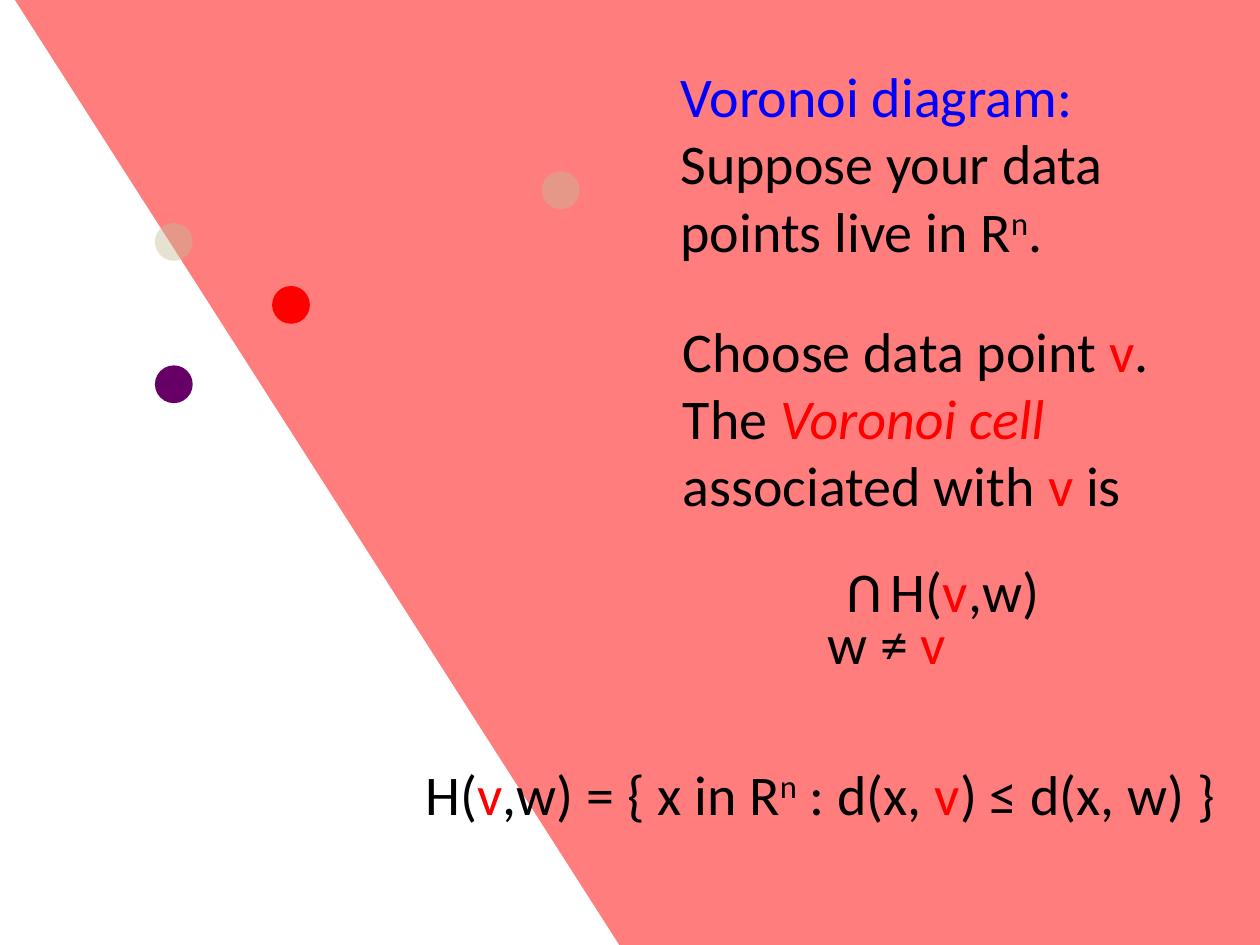
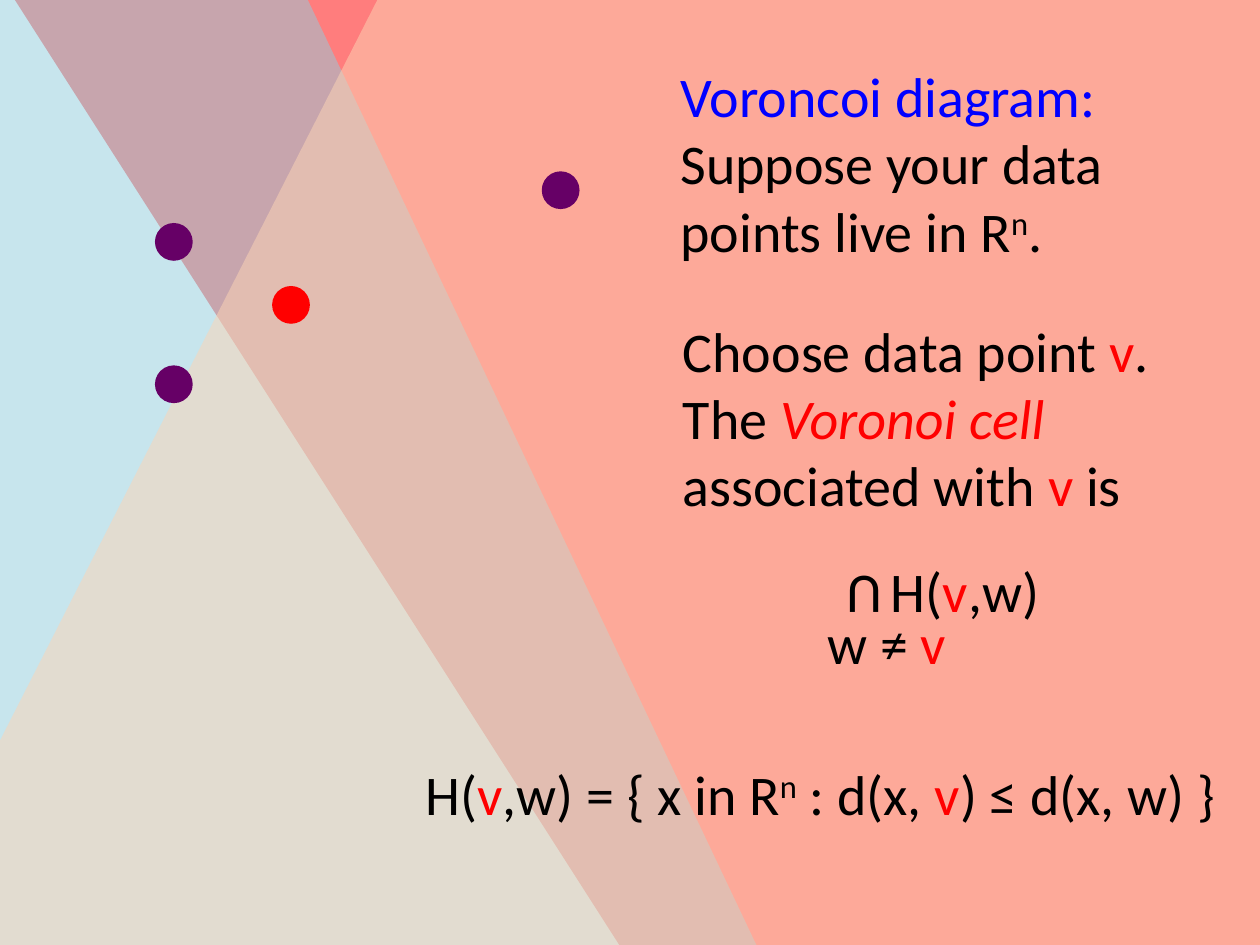
from lxml import etree
from pptx import Presentation
from pptx.dml.color import RGBColor
from pptx.enum.shapes import MSO_SHAPE
from pptx.enum.text import MSO_ANCHOR, MSO_AUTO_SIZE, PP_ALIGN
from pptx.oxml.ns import qn
from pptx.util import Inches, Pt

RECT, OVAL = MSO_SHAPE.RECTANGLE, MSO_SHAPE.OVAL
TOP, GROW = MSO_ANCHOR.TOP, MSO_AUTO_SIZE.SHAPE_TO_FIT_TEXT
LEFT, MID = PP_ALIGN.LEFT, PP_ALIGN.CENTER

HUES = {"ink": "000000", "head": "0000FF", "red": "FF0000", "plum": "660066",
        "faint": "C4BD97", "sky": "93CDDD", "peach": "FCD5B5"}
DOT = 0.3
RED_V = ("v", {"hue": "red"})
SUP_N = ("n", {"sup": True})


def paint(slide, kind, place, hue, alpha=100, turn=0):
    shape = slide.shapes.add_shape(kind, *map(Inches, place))
    shape.shadow.inherit = False
    shape.rotation = turn
    shape.line.fill.background()
    shape.fill.solid()
    shape.fill.fore_color.rgb = RGBColor.from_string(HUES[hue])
    if alpha < 100:
        tone = shape.fill._xPr.find(".//" + qn("a:srgbClr"))
        etree.SubElement(tone, qn("a:alpha"), val=str(alpha * 1000))


def write(slide, text, place, box=None, wrap=True, turn=0, gap=0, align=LEFT):
    box = box or slide.shapes.add_textbox(0, 0, 0, 0)
    box.left, box.top, box.width, box.height = map(Inches, place)
    box.rotation = turn
    frame = box.text_frame
    frame.word_wrap, frame.auto_size = wrap, GROW
    frame.vertical_anchor = TOP
    for row, parts in enumerate(text):
        para = frame.add_paragraph() if row else frame.paragraphs[0]
        para.alignment = LEFT
        for part in parts:
            words, style = (part, {}) if isinstance(part, str) else part
            run = para.add_run()
            run.text = words
            font = run.font
            font.name, font.size = "Calibri", Pt(32)
            font.color.rgb = RGBColor.from_string(HUES[style.get("hue", "ink")])
            if style.get("slant"):
                font.italic = True
            if style.get("sup"):
                font._element.set("baseline", "30000")
    if gap:
        para.space_before = Pt(gap)
    para.alignment = align


deck = Presentation()
deck.slide_width, deck.slide_height = Inches(10), Inches(7.5)

RED_HALF = ((0.86, -2.07, 13.13, 9.45), "red", 57.4)
SKY_HALF = ((-3.78, 1.61, 10.15, 6.05), "sky", 64.6)
PEACH_HALF = ((0.04, -0.25, 12.17, 9.8), "peach", 297)

PAGES = [
    ("Voronoi diagram:", [RED_HALF], ("faint", 43)),
    ("Voroncoi diagram:", [RED_HALF, SKY_HALF, PEACH_HALF], ("plum", 100)),
]

for head, halves, (hue, alpha) in PAGES:
    slide = deck.slides.add_slide(deck.slide_layouts[5])
    title = slide.shapes.title

    for place, tint, turn in halves:
        paint(slide, RECT, place, tint, alpha=51, turn=turn)

    dots = [(1.23, 2.9, "plum", 100), (2.16, 2.27, "red", 100),
            (1.23, 1.77, hue, alpha), (4.3, 1.36, hue, alpha)]
    for x, y, tint, clear in dots:
        paint(slide, OVAL, (x, y, DOT, DOT), tint, alpha=clear)

    slide.shapes._spTree.append(title._element)
    write(slide, [[(head, {"hue": "head"})],
                  ["Suppose your data points live in R", SUP_N, "."]],
          (5.3, 0.44, 4.19, 1.72), box=title)
    write(slide, [["Choose data point ", RED_V, "."],
                  ["The ", ("Voronoi cell ", {"hue": "red", "slant": True}),
                   "associated with ", RED_V, " is"],
                  ["H(", RED_V, ",w)"]],
          (5.32, 2.46, 4.68, 2.57), gap=22, align=MID)
    write(slide, [["U"]], (6.76, 4.43, 0.34, 0.64), turn=180)
    write(slide, [["w ≠ ", RED_V]], (6.47, 4.78, 1.4, 0.64))
    write(slide, [["H(", RED_V, ",w) = { x in R", SUP_N, " : d(x, ", RED_V,
                   ") ≤ d(x, w) }"]],
          (3.28, 5.98, 6.54, 0.64), wrap=False)

deck.save("out.pptx")
